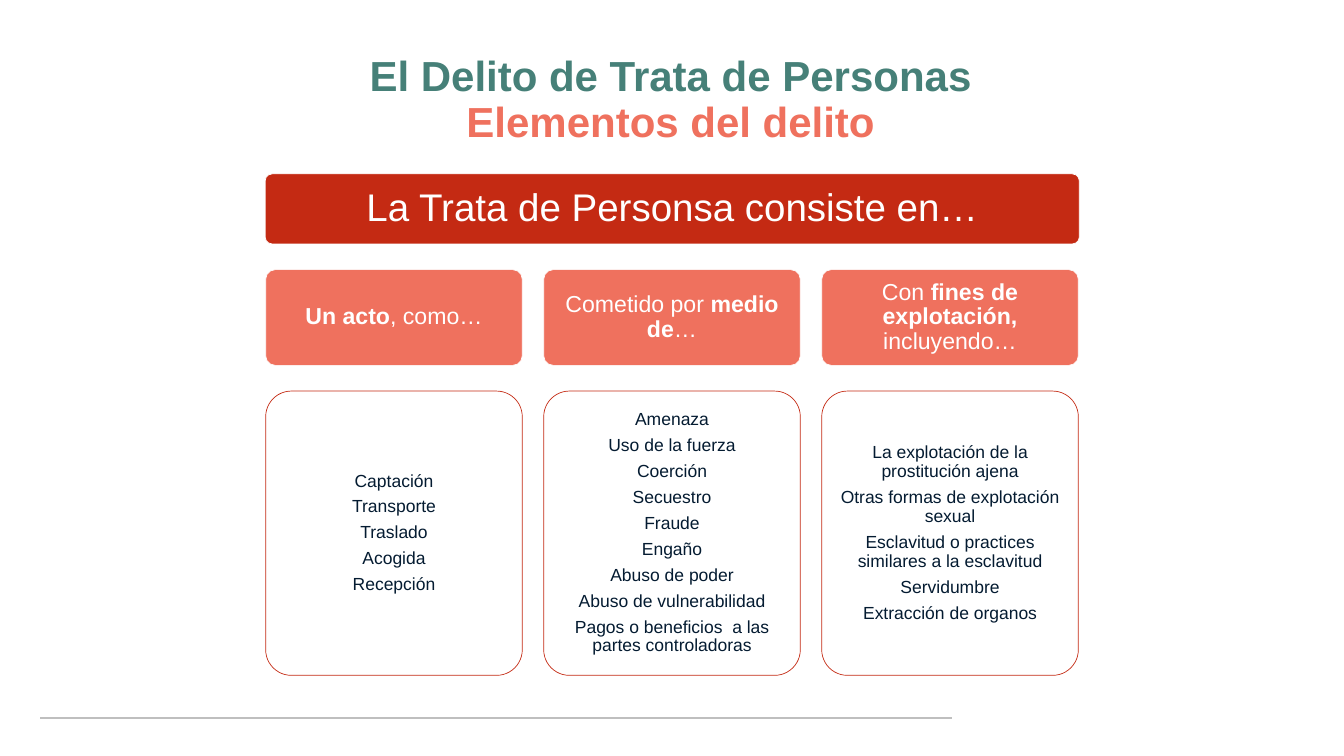
from lxml import etree
from pptx import Presentation
from pptx.dml.color import RGBColor
from pptx.enum.shapes import MSO_CONNECTOR, MSO_SHAPE
from pptx.enum.text import MSO_ANCHOR, MSO_AUTO_SIZE, PP_ALIGN
from pptx.oxml.ns import qn
from pptx.util import Inches, Pt

ROUNDED = MSO_SHAPE.ROUNDED_RECTANGLE
STRAIGHT = MSO_CONNECTOR.STRAIGHT
MIDDLE = MSO_ANCHOR.MIDDLE
NO_AUTOFIT = MSO_AUTO_SIZE.NONE
CENTER = PP_ALIGN.CENTER

FONT = "Arial"
COLORS = {
    "teal": "468078",
    "coral": "EF715E",
    "red": "C42A13",
    "navy": "041B31",
    "white": "FFFFFF",
    "gray": "BFBFBF",
}


def rgb(name):
    return RGBColor.from_string(COLORS[name])


def write(frame, paragraphs, size, color, inset_x, inset_y, after=0):
    """Write paragraphs, each a list of (text, bold) or (text, bold, color) runs."""
    frame.word_wrap = True
    frame.auto_size = NO_AUTOFIT
    frame.vertical_anchor = MIDDLE
    frame.margin_left = frame.margin_right = Inches(inset_x)
    frame.margin_top = frame.margin_bottom = Inches(inset_y)
    for index, runs in enumerate(paragraphs):
        paragraph = frame.add_paragraph() if index else frame.paragraphs[0]
        paragraph.alignment = CENTER
        paragraph.line_spacing = 0.9
        paragraph.space_before = Pt(0)
        paragraph.space_after = Pt(after)
        for text, bold, *own_color in runs:
            if text == "\n":
                paragraph.add_line_break()
                continue
            run = paragraph.add_run()
            run.text = text
            run.font.name = FONT
            run.font.size = Pt(size)
            run.font.bold = bold
            run.font.color.rgb = rgb(own_color[0] if own_color else color)


prs = Presentation()
prs.slide_width = Inches(26.66)
prs.slide_height = Inches(15)
slide = prs.slides.add_slide(prs.slide_layouts[5])

# Footer rule
footer_rule = slide.shapes.add_connector(
    STRAIGHT, Inches(0.8), Inches(14.25), Inches(18.88), Inches(14.25))
footer_rule.line.color.rgb = rgb("gray")
footer_rule.line.width = Pt(2.25)
etree.SubElement(footer_rule._element.spPr, qn("a:effectLst"))

# Title
title = slide.shapes.title
title.left, title.top = Inches(0.8), Inches(0.55)
title.width, title.height = Inches(25.01), Inches(2.9)
heading = [("El Delito de Trata de Personas", True), ("\n", True),
           ("Elementos del delito", True, "coral")]
write(title.text_frame, [heading], size=60, color="teal", inset_x=0.2, inset_y=0.1)

# Content of the diagram: each column has a header and its items
columns = [
    ([("Un acto", True), (", como…", False)],
     ["Captación", "Transporte", "Traslado", "Acogida", "Recepción"]),
    ([("Cometido por ", False), ("medio de", True), ("…", False)],
     ["Amenaza", "Uso de la fuerza", "Coerción", "Secuestro", "Fraude", "Engaño",
      "Abuso de poder", "Abuso de vulnerabilidad",
      "Pagos o beneficios  a las partes controladoras"]),
    ([("Con ", False), ("fines de explotación, ", True), ("incluyendo…", False)],
     ["La explotación de la prostitución ajena",
      "Otras formas de explotación sexual",
      "Esclavitud o practices similares a la esclavitud",
      "Servidumbre", "Extracción de organos"]),
]
COLUMN_LEFT, COLUMN_WIDTH, COLUMN_STEP = 5.27, 5.09, 5.515

# Boxes: left, top, width, height, fill, line, paragraphs, size, text color, inset
boxes = [(5.26, 3.45, 16.15, 1.39, "red", "white",
          [[("La Trata de Personsa consiste en…", False)]], 55, "white", 0.23)]
for number, (header, items) in enumerate(columns):
    left = COLUMN_LEFT + number * COLUMN_STEP
    boxes.append((left, 5.35, COLUMN_WIDTH, 1.9, "coral", "white",
                  [header], 33, "white", 0.14))
    boxes.append((left, 7.76, COLUMN_WIDTH, 5.64, None, "red",
                  [[(item, False)] for item in items], 25, "navy", 0.1))

# Diagram
for left, top, width, height, fill, line, paragraphs, size, color, inset in boxes:
    box = slide.shapes.add_shape(
        ROUNDED, Inches(left), Inches(top), Inches(width), Inches(height))
    box.adjustments[0] = 0.1
    box.shadow.inherit = False
    if fill:
        box.fill.solid()
        box.fill.fore_color.rgb = rgb(fill)
    else:
        box.fill.background()
    box.line.color.rgb = rgb(line)
    box.line.width = Pt(1)
    write(box.text_frame, paragraphs, size=size, color=color,
          inset_x=inset, inset_y=inset, after=0.4 * size)

prs.save("out.pptx")
